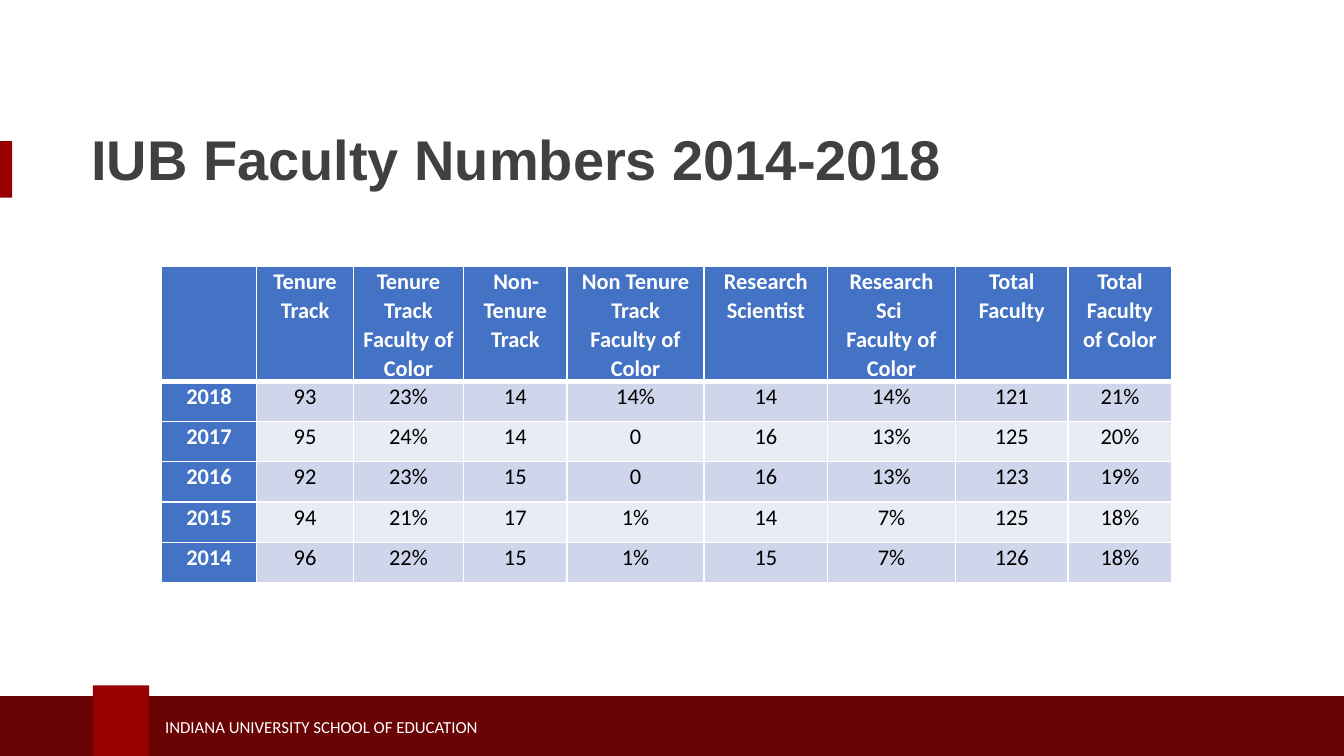
from copy import deepcopy

from lxml import etree
from pptx import Presentation
from pptx import util as u
from pptx.dml.color import RGBColor
from pptx.enum import shapes, text
from pptx.oxml.ns import qn

CRIMSON = RGBColor(0x99, 0x00, 0x00)
DARK_CRIMSON = RGBColor(0x69, 0x03, 0x04)
CHARCOAL = RGBColor(0x40, 0x40, 0x41)
WHITE = RGBColor(0xFF, 0xFF, 0xFF)
BLACK = RGBColor(0x00, 0x00, 0x00)
BLUE = RGBColor(0x44, 0x72, 0xC4)
BAND_DARK = RGBColor(0xCF, 0xD5, 0xEA)
BAND_LIGHT = RGBColor(0xE9, 0xEB, 0xF5)

FACULTY = [
    ["", "Tenure Track", "Tenure Track Faculty of Color", "Non-Tenure Track",
     "Non Tenure Track Faculty of Color", "Research Scientist",
     "Research Sci \nFaculty of Color", "Total Faculty", "Total Faculty of Color"],
    ["2018", "93", "23%", "14", "14%", "14", "14%", "121", "21%"],
    ["2017", "95", "24%", "14", "0", "16", "13%", "125", "20%"],
    ["2016", "92", "23%", "15", "0", "16", "13%", "123", "19%"],
    ["2015", "94", "21%", "17", "1%", "14", "7%", "125", "18%"],
    ["2014", "96", "22%", "15", "1%", "15", "7%", "126", "18%"],
]
COLUMN_WIDTHS = [0.71, 0.72, 0.82, 0.77, 1.02, 0.92, 0.95, 0.84, 0.77]
ROW_HEIGHT = 0.3


def format_runs(paragraph, size, font_name, color, bold=False):
    for run in paragraph.runs:
        run.font.size = u.Pt(size)
        run.font.name = font_name
        run.font.color.rgb = color
        run.font.bold = bold


def add_block(slide, left, top, width, height, color):
    block = slide.shapes.add_shape(
        shapes.MSO_SHAPE.RECTANGLE,
        u.Inches(left), u.Inches(top), u.Inches(width), u.Inches(height))
    block.shadow.inherit = False
    block.fill.solid()
    block.fill.fore_color.rgb = color
    block.line.fill.background()


def set_title(slide, wording):
    title = slide.shapes.title
    title.left, title.top = u.Inches(0.58), u.Inches(0.83)
    title.width, title.height = u.Inches(8.75), u.Inches(0.76)
    frame = title.text_frame
    frame.text = wording
    frame.auto_size = text.MSO_AUTO_SIZE.NONE
    frame.vertical_anchor = text.MSO_ANCHOR.MIDDLE
    heading = frame.paragraphs[0]
    heading.alignment = text.PP_ALIGN.LEFT
    heading.line_spacing = 0.9
    format_runs(heading, 30, "Arial", CHARCOAL, bold=True)


def add_footer(slide, wording):
    add_block(slide, -0.03, 5.18, 10.09, 0.5, DARK_CRIMSON)
    add_block(slide, 0.69, 5.1, 0.42, 0.58, CRIMSON)
    school = slide.shapes.add_textbox(
        u.Inches(1.13), u.Inches(5.28), u.Inches(3.95), u.Inches(0.25))
    frame = school.text_frame
    frame.word_wrap = True
    frame.vertical_anchor = text.MSO_ANCHOR.MIDDLE
    frame.text = wording
    format_runs(frame.paragraphs[0], 9, "Calibri", WHITE)


def set_borders(cell, bottom_width):
    properties = cell._tc.get_or_add_tcPr()
    widths = {"a:lnL": 1, "a:lnR": 1, "a:lnT": 1, "a:lnB": bottom_width}
    # Border lines come before the fill in the cell properties
    for position, (side, width) in enumerate(widths.items()):
        line = etree.Element(qn(side), w=str(u.Pt(width)))
        fill = etree.SubElement(line, qn("a:solidFill"))
        etree.SubElement(fill, qn("a:srgbClr"), val=str(WHITE))
        properties.insert(position, line)


def fill_cell(cell, wording, row, column):
    is_heading = row == 0 or column == 0
    band = BAND_DARK if row % 2 else BAND_LIGHT
    cell.fill.solid()
    cell.fill.fore_color.rgb = BLUE if is_heading else band
    cell.margin_left = cell.margin_right = u.Inches(0.07)
    cell.margin_top = cell.margin_bottom = 0

    entry = cell.text_frame.paragraphs[0]
    entry.text = wording
    entry.alignment = text.PP_ALIGN.CENTER
    entry.line_spacing = 1.07
    format_runs(entry, 12, "Calibri", WHITE if is_heading else BLACK, is_heading)
    # Line breaks take the size of the text around them
    for line_break in entry._p.findall(qn("a:br")):
        line_break.append(deepcopy(entry.runs[0]._r.rPr))

    # A thicker rule separates the header from the years
    set_borders(cell, 3 if row == 0 else 1)


def add_faculty_table(slide):
    frame = slide.shapes.add_table(
        len(FACULTY), len(COLUMN_WIDTHS), u.Inches(1.2), u.Inches(1.98),
        u.Inches(sum(COLUMN_WIDTHS)), u.Inches(2.35))
    faculty = frame.table
    for column, width in zip(faculty.columns, COLUMN_WIDTHS):
        column.width = u.Inches(width)
    # The header row grows with its wrapped text
    for row in faculty.rows:
        row.height = u.Inches(ROW_HEIGHT)
    frame.height = u.Inches(2.35)
    for row, entries in enumerate(FACULTY):
        for column, wording in enumerate(entries):
            fill_cell(faculty.cell(row, column), wording, row, column)


def main():
    presentation = Presentation()
    # Widescreen, 16:9
    presentation.slide_width = u.Inches(10)
    presentation.slide_height = u.Inches(10 * 9 / 16)
    slide = presentation.slides.add_slide(presentation.slide_layouts[5])

    # Title with its accent at the left edge
    add_block(slide, 0, 1.05, 0.09, 0.42, CRIMSON)
    set_title(slide, "IUB Faculty Numbers 2014-2018")

    # Footer band with the school name
    add_footer(slide, "INDIANA UNIVERSITY SCHOOL OF EDUCATION")

    # Faculty counts and shares by year
    add_faculty_table(slide)

    presentation.save("out.pptx")


if __name__ == "__main__":
    main()
